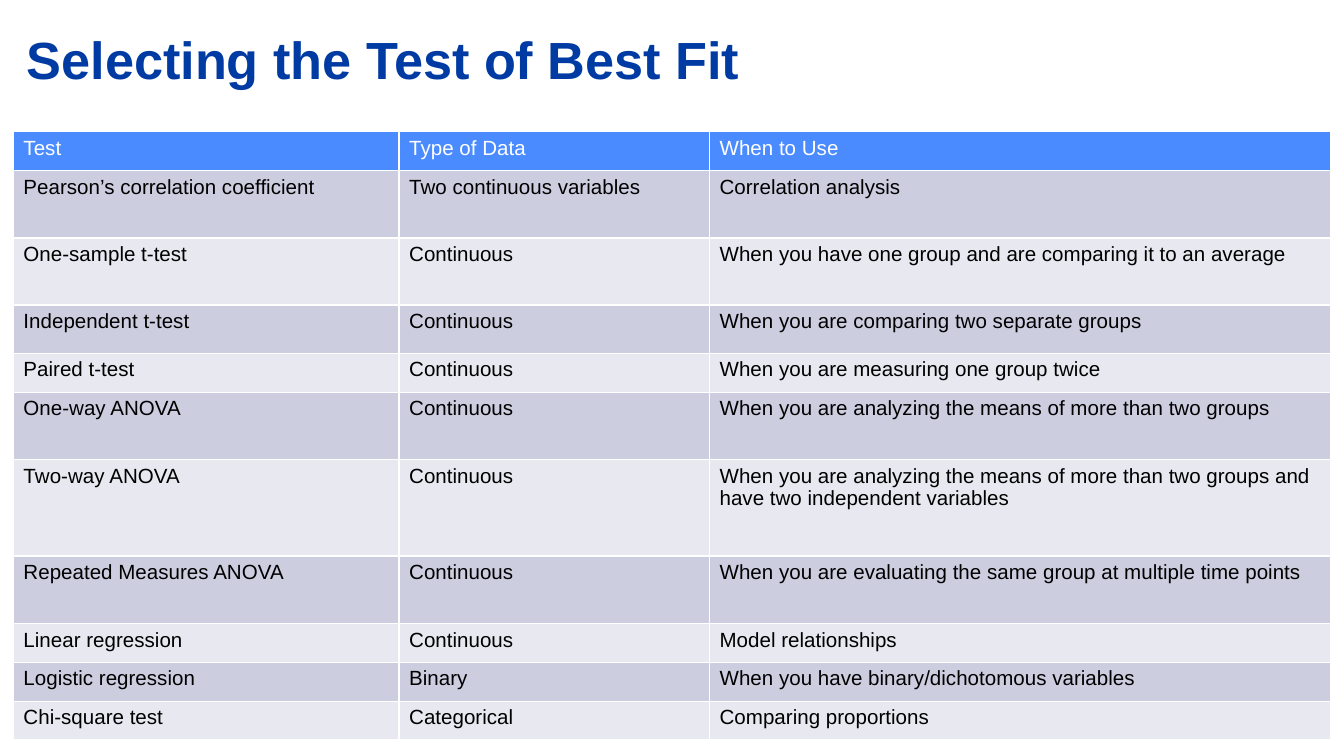
from lxml import etree
from pptx import Presentation
from pptx.dml.color import RGBColor
from pptx.enum import text
from pptx.oxml import ns
from pptx.util import Inches, Pt

FONT = "Arial"
WHITE, BLACK, NAVY, BLUE = "FFFFFF", "000000", "003BA3", "4A8CFF"
BANDS = ("CCCEE0", "E7E8F0")
COLUMN_WIDTHS = (2.87, 2.31, 4.62)
HEADER = ("Test", "Type of Data", "When to Use")
HEADER_HEIGHT = 0.29
TESTS = (
    (0.5, "Pearson’s correlation coefficient", "Two continuous variables", "Correlation analysis"),
    (0.5, "One-sample t-test", "Continuous",
     "When you have one group and are comparing it to an average"),
    (0.36, "Independent t-test", "Continuous", "When you are comparing two separate groups"),
    (0.29, "Paired t-test", "Continuous", "When you are measuring one group twice"),
    (0.5, "One-way ANOVA", "Continuous",
     "When you are analyzing the means of more than two groups"),
    (0.72, "Two-way ANOVA", "Continuous",
     "When you are analyzing the means of more than two groups and "
     "have two independent variables"),
    (0.5, "Repeated Measures ANOVA", "Continuous",
     "When you are evaluating the same group at multiple time points"),
    (0.29, "Linear regression", "Continuous", "Model relationships"),
    (0.29, "Logistic regression", "Binary", "When you have binary/dichotomous variables"),
    (0.29, "Chi-square test", "Categorical", "Comparing proportions"),
)


def color(value):
    return RGBColor.from_string(value)


def add_run(paragraph, words, size, hex_color, bold=False):
    run = paragraph.add_run()
    run.text = words
    run.font.name = FONT
    run.font.size = Pt(size)
    run.font.bold = bold
    run.font.color.rgb = color(hex_color)


def set_margins(target, horizontal, vertical):
    target.margin_left = target.margin_right = horizontal
    target.margin_top = target.margin_bottom = vertical


def add_title(slide, words):
    title = slide.shapes.title
    title.left, title.top = Inches(0.1), Inches(0.1)
    title.width, title.height = Inches(8.62), Inches(1.09)
    frame = title.text_frame
    frame.word_wrap = True
    frame.auto_size = text.MSO_AUTO_SIZE.NONE
    frame.vertical_anchor = text.MSO_ANCHOR.TOP
    set_margins(frame, Inches(0.1), Inches(0.1))
    paragraph = frame.paragraphs[0]
    paragraph.alignment = text.PP_ALIGN.LEFT
    add_run(paragraph, words, 28, NAVY, bold=True)


def set_borders(cell):
    """Draw white borders; call before the cell's fill is set."""
    properties = cell._tc.get_or_add_tcPr()
    for side in "LRTB":
        line = etree.SubElement(properties, ns.qn(f"a:ln{side}"), w=str(Pt(1)))
        fill = etree.SubElement(line, ns.qn("a:solidFill"))
        etree.SubElement(fill, ns.qn("a:srgbClr"), val=WHITE)


def fill_row(table, index, height, entries, fill_color, text_color):
    table.rows[index].height = Inches(height)
    for cell, words in zip(table.rows[index].cells, entries):
        set_borders(cell)
        cell.fill.solid()
        cell.fill.fore_color.rgb = color(fill_color)
        set_margins(cell, Pt(5.4), Pt(2.7))
        add_run(cell.text_frame.paragraphs[0], words, 11, text_color)


def add_test_table(slide):
    height = HEADER_HEIGHT + sum(test[0] for test in TESTS)
    table = slide.shapes.add_table(
        len(TESTS) + 1, len(HEADER), Inches(0.1), Inches(0.98),
        Inches(sum(COLUMN_WIDTHS)), Inches(height)).table
    for column, width in zip(table.columns, COLUMN_WIDTHS):
        column.width = Inches(width)
    fill_row(table, 0, HEADER_HEIGHT, HEADER, BLUE, WHITE)
    for index, (row_height, *entries) in enumerate(TESTS, start=1):
        fill_row(table, index, row_height, entries, BANDS[(index - 1) % 2], BLACK)


def main():
    presentation = Presentation()
    presentation.slide_width = Inches(10)
    presentation.slide_height = presentation.slide_width * 9 // 16
    slide = presentation.slides.add_slide(presentation.slide_layouts.get_by_name("Title Only"))
    add_title(slide, "Selecting the Test of Best Fit")
    add_test_table(slide)
    presentation.save("out.pptx")


if __name__ == "__main__":
    main()
